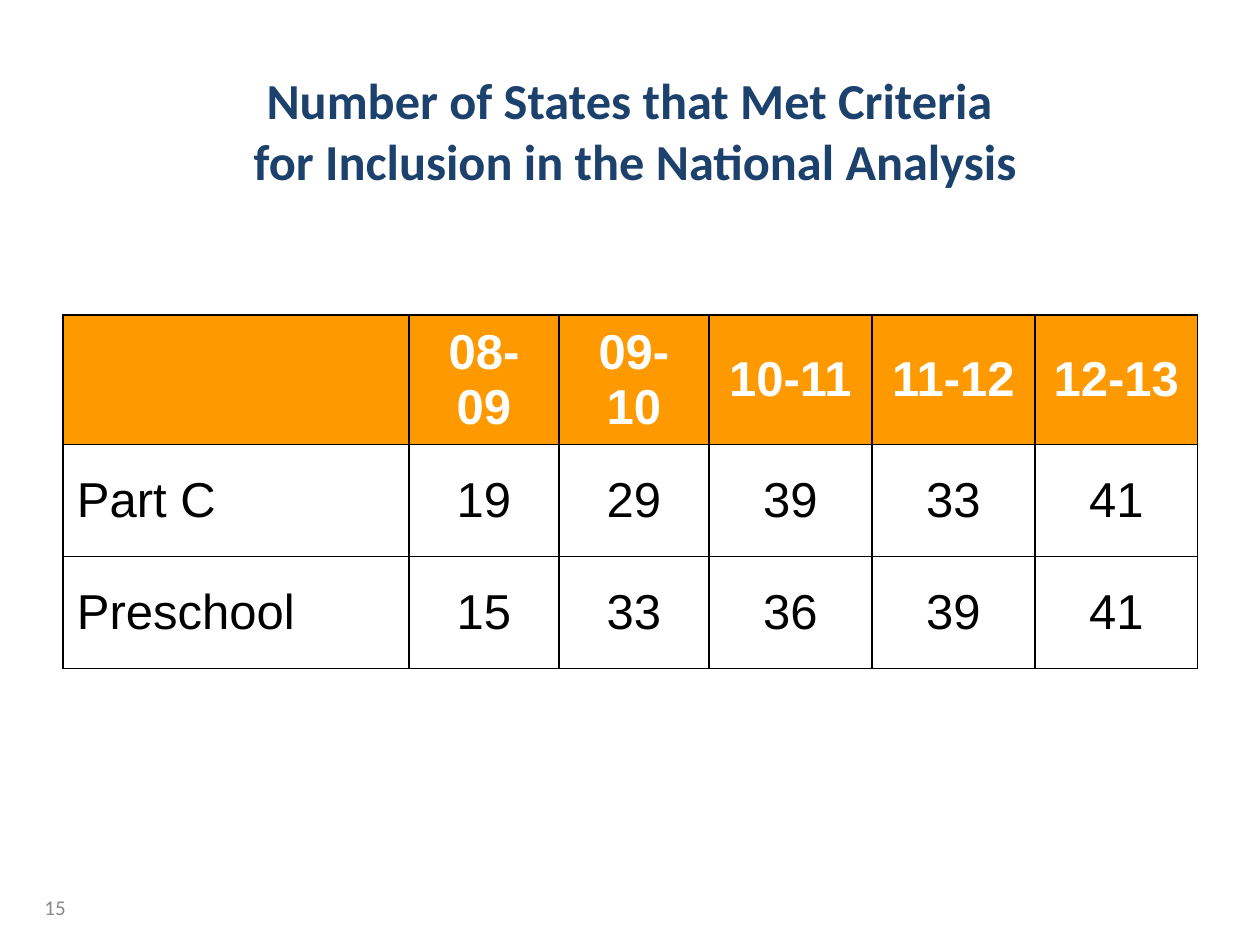
from dataclasses import dataclass

from lxml import etree
from pptx import Presentation
from pptx import util as u
from pptx.dml.color import RGBColor
from pptx.enum import text
from pptx.oxml import ns

PX = 914400 / 126


def px(length):
    return u.Emu(round(length * PX))


@dataclass(frozen=True)
class Theme:
    heading_font: str = "Calibri"
    table_font: str = "Arial"
    navy: str = "1B416C"
    grey: str = "898989"
    orange: str = "FF9900"
    white: str = "FFFFFF"
    black: str = "000000"
    title_size: float = 28.8
    table_size: float = 28
    number_size: float = 12
    border_width: float = 1


class SlideBuilder:
    def __init__(self, slide, theme):
        self.slide = slide
        self.theme = theme

    def style(self, paragraph, font, size, color, bold=False,
              align=text.PP_ALIGN.LEFT):
        paragraph.alignment = align
        paragraph.font.name = font
        paragraph.font.size = u.Pt(size)
        paragraph.font.bold = bold
        paragraph.font.color.rgb = RGBColor.from_string(color)

    def title(self, wording, left, top, width, height):
        heading = self.slide.shapes.title
        heading.left, heading.top = px(left), px(top)
        heading.width, heading.height = px(width), px(height)
        frame = heading.text_frame
        frame.text = wording
        frame.word_wrap = True
        frame.auto_size = text.MSO_AUTO_SIZE.NONE
        frame.vertical_anchor = text.MSO_ANCHOR.TOP
        self.style(frame.paragraphs[0], self.theme.heading_font,
                   self.theme.title_size, self.theme.navy, True,
                   text.PP_ALIGN.CENTER)

    def page_number(self, number, left, top, width, height):
        frame = self.slide.shapes.add_textbox(
            px(left), px(top), px(width), px(height)).text_frame
        frame.text = number
        frame.word_wrap = True
        frame.vertical_anchor = text.MSO_ANCHOR.MIDDLE
        self.style(frame.paragraphs[0], self.theme.heading_font,
                   self.theme.number_size, self.theme.grey)

    def border(self, cell):
        properties = cell._tc.get_or_add_tcPr()
        for position, side in enumerate(("lnL", "lnR", "lnT", "lnB")):
            line = etree.Element(ns.qn(f"a:{side}"),
                                 w=str(u.Pt(self.theme.border_width)))
            fill = etree.SubElement(line, ns.qn("a:solidFill"))
            etree.SubElement(fill, ns.qn("a:srgbClr"), val=self.theme.black)
            properties.insert(position, line)

    def cell(self, cell, wording, is_header, is_label):
        theme = self.theme
        cell.text = wording
        cell.vertical_anchor = text.MSO_ANCHOR.MIDDLE
        cell.margin_left = cell.margin_right = px(14)
        cell.margin_top = cell.margin_bottom = px(6)
        cell.fill.solid()
        cell.fill.fore_color.rgb = RGBColor.from_string(
            theme.orange if is_header else theme.white)
        self.border(cell)
        self.style(cell.text_frame.paragraphs[0], theme.table_font,
                   theme.table_size,
                   theme.white if is_header else theme.black, is_header,
                   text.PP_ALIGN.LEFT if is_label else text.PP_ALIGN.CENTER)

    def table(self, rows, left, top, column_widths, row_height):
        table = self.slide.shapes.add_table(
            len(rows), len(column_widths), px(left), px(top),
            px(sum(column_widths)), px(row_height * len(rows))).table
        table.first_row = table.horz_banding = False
        for column, width in zip(table.columns, column_widths):
            column.width = px(width)
        for r, row in enumerate(rows):
            table.rows[r].height = px(row_height)
            for c, wording in enumerate(row):
                self.cell(table.cell(r, c), wording, r == 0, c == 0)


def main():
    deck = Presentation()
    deck.slide_width, deck.slide_height = px(1260), px(945)
    title_only = deck.slide_layouts[5]
    builder = SlideBuilder(deck.slides.add_slide(title_only), Theme())

    # Heading
    builder.title("Number of States that Met Criteria \v"
                  "for Inclusion in the National Analysis", 32, 63, 1207, 94)

    # Page number
    builder.page_number("15", 32, 882, 220, 50)

    # States per program and year
    state_counts = [
        ("", "08-09", "09-10", "10-11", "11-12", "12-13"),
        ("Part C", "19", "29", "39", "33", "41"),
        ("Preschool", "15", "33", "36", "39", "41"),
    ]
    builder.table(state_counts, 63, 315, [346] + [150] * 2 + [163] * 3, 112)

    deck.save("out.pptx")


if __name__ == "__main__":
    main()
